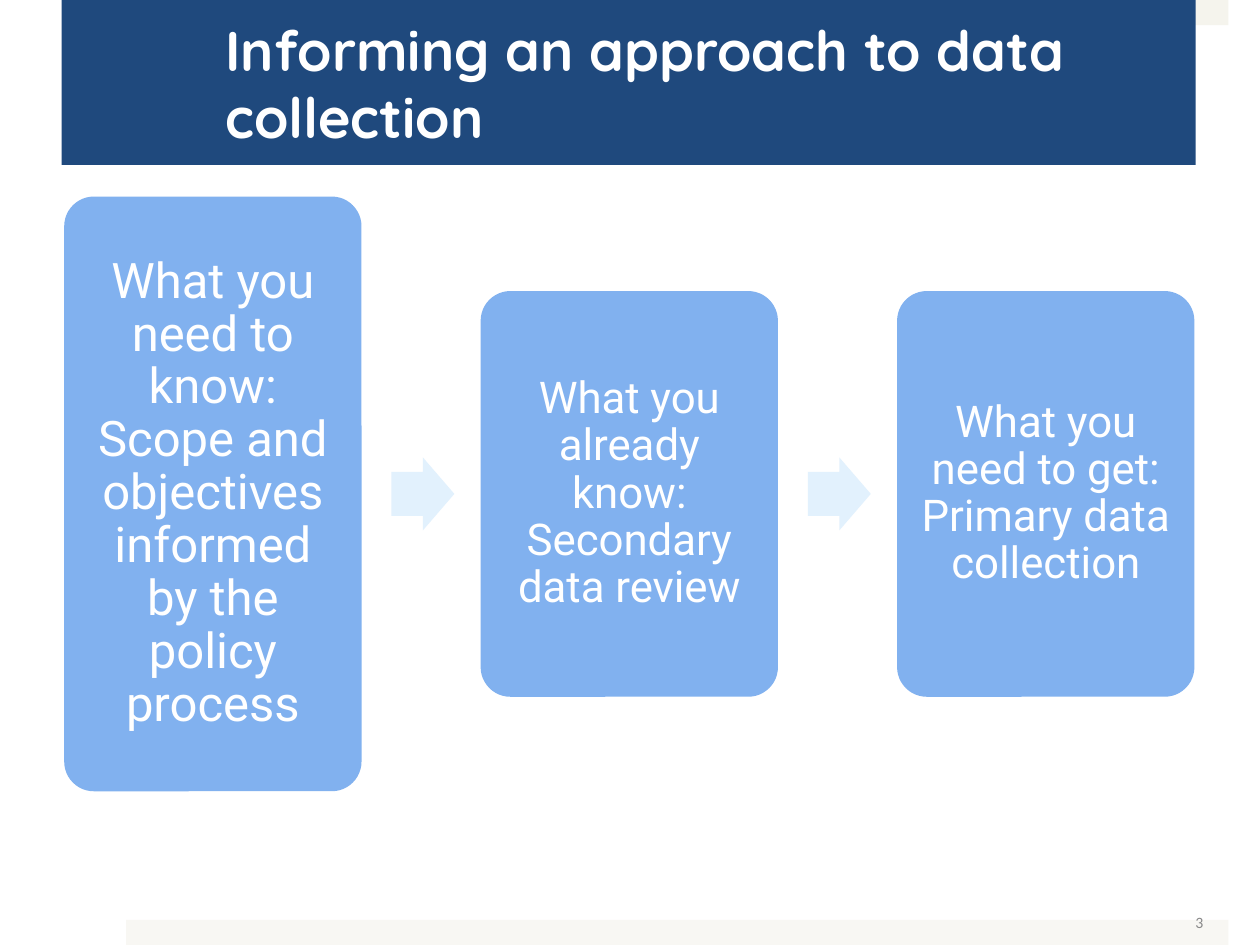
from dataclasses import dataclass

from pptx import Presentation
from pptx.dml.color import RGBColor
from pptx.enum import shapes, text
from pptx.util import Inches, Pt


@dataclass(frozen=True)
class Theme:
    """Colours, fonts and type sizes of the deck."""
    banner: str = "1F497D"
    card: str = "81B1EF"
    arrow: str = "E2F1FD"
    top_strip: str = "F5F4ED"
    bottom_strip: str = "F8F7F3"
    light: str = "FFFFFF"
    muted: str = "898989"
    heading: str = "Quicksand"
    body: str = "Roboto"
    small: str = "Calibri"
    title_size: int = 32
    lead_size: int = 28
    step_size: int = 25
    number_size: int = 9


@dataclass(frozen=True)
class Box:
    """A region in inches."""
    left: float
    top: float
    width: float
    height: float

    def inches(self):
        """Return the region as lengths."""
        return [Inches(n) for n in (self.left, self.top, self.width, self.height)]


THEME = Theme()
KIND = shapes.MSO_SHAPE
STEPS = [
    ("What you need to know: Scope and objectives informed by the policy process",
     THEME.lead_size, 0.12, 4.72),
    ("What you already know: Secondary data review", THEME.step_size, 0.1, 3.22),
    ("What you need to get: Primary data collection", THEME.step_size, 0.1, 3.22),
]


def add_block(slide, kind, box, fill, adjustments=()):
    """Add a flat filled shape without outline."""
    block = slide.shapes.add_shape(kind, *box.inches())
    block.shadow.inherit = False
    block.fill.solid()
    block.fill.fore_color.rgb = RGBColor.from_string(fill)
    block.line.fill.background()
    for index, share in enumerate(adjustments):
        block.adjustments[index] = share
    return block


def write(holder, words, insets, align, font, size, colour, bold=False, spacing=1.0):
    """Write one vertically centred paragraph into a shape."""
    frame = holder.text_frame
    frame.word_wrap = True
    frame.vertical_anchor = text.MSO_ANCHOR.MIDDLE
    (frame.margin_left, frame.margin_top,
     frame.margin_right, frame.margin_bottom) = [Inches(n) for n in insets]
    paragraph = frame.paragraphs[0]
    paragraph.text = words
    paragraph.alignment = align
    paragraph.line_spacing = spacing
    paragraph.font.name = font
    paragraph.font.size = Pt(size)
    paragraph.font.bold = bold
    paragraph.font.color.rgb = RGBColor.from_string(colour)


def add_frame(slide, box, number):
    """Place the edge strips and the slide number."""
    strip = 0.2
    bottom = box.top + box.height - strip
    add_block(slide, KIND.RECTANGLE, Box(box.left, box.top, box.width, strip),
              THEME.top_strip)
    add_block(slide, KIND.RECTANGLE, Box(box.left, bottom, box.width, strip),
              THEME.bottom_strip)
    width, height = 2.33, 0.4
    place = Box(box.left + box.width - width - 0.13, bottom - 0.18, width, height)
    page = slide.shapes.add_textbox(*place.inches())
    write(page, number, (0.07, 0.04, 0.07, 0.04), text.PP_ALIGN.RIGHT,
          THEME.small, THEME.number_size, THEME.muted)


def add_banner(slide, box, title):
    """Place the title on its coloured band."""
    banner = add_block(slide, KIND.RECTANGLE, box, THEME.banner)
    write(banner, title, (1.3, 0.05, 0.3, 0.05), text.PP_ALIGN.LEFT,
          THEME.heading, THEME.title_size, THEME.light, bold=True)


def add_flow(slide, box, steps):
    """Spread step cards evenly, with an arrow in each gap."""
    card_width, arrow_width, arrow_height = 2.36, 0.5, 0.58
    pitch = (box.width - card_width) / (len(steps) - 1)
    middle = box.top + box.height / 2
    for index, (words, size, inset, height) in enumerate(steps):
        left = box.left + index * pitch
        if index:
            gap = pitch - card_width
            arrow = Box(left - gap * 0.75, middle - arrow_height / 2,
                        arrow_width, arrow_height)
            add_block(slide, KIND.RIGHT_ARROW, arrow, THEME.arrow, (0.6, 0.5))
        card = add_block(slide, KIND.ROUNDED_RECTANGLE,
                         Box(left, middle - height / 2, card_width, height),
                         THEME.card, (0.1,))
        write(card, words, (inset,) * 4, text.PP_ALIGN.CENTER,
              THEME.body, size, THEME.light, spacing=0.9)


def main():
    """Build and save the slide."""
    deck = Presentation()
    deck.slide_width, deck.slide_height = Inches(10), Inches(7.5)
    slide = deck.slides.add_slide(deck.slide_layouts[6])
    add_frame(slide, Box(1, 0, 8.75, 7.5), "3")
    add_banner(slide, Box(0.49, 0, 9, 1.31), "Informing an approach to data collection")
    add_flow(slide, Box(0.51, 1.56, 8.97, 4.72), STEPS)
    deck.save("out.pptx")


if __name__ == "__main__":
    main()
